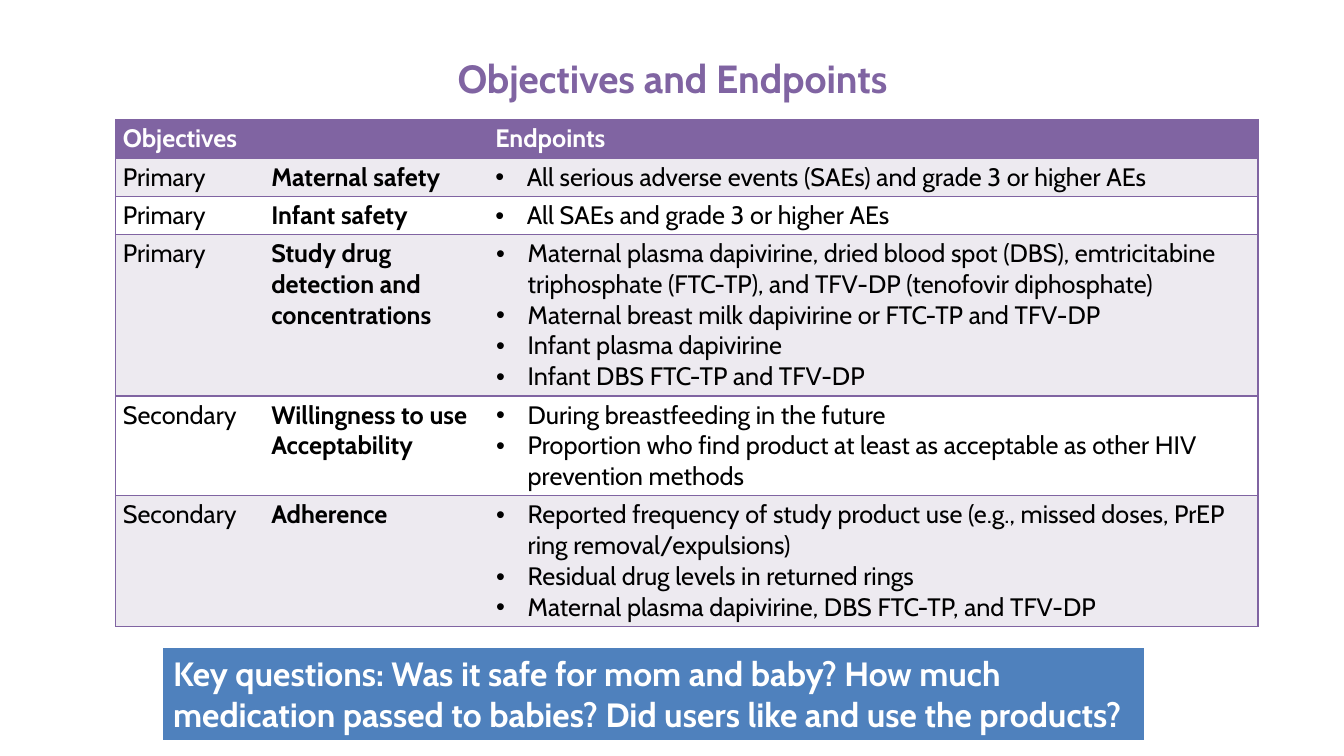
from lxml import etree
from pptx import Presentation
from pptx.dml.color import RGBColor
from pptx.enum.shapes import MSO_SHAPE
from pptx.enum.text import MSO_ANCHOR, PP_ALIGN
from pptx.oxml.ns import qn
from pptx.util import Pt

RECT = MSO_SHAPE.RECTANGLE
TOP = MSO_ANCHOR.TOP
LEFT, MID = PP_ALIGN.LEFT, PP_ALIGN.CENTER
PURPLE, LILAC, WHITE, BLACK, BLUE = "8064A2", "EDEAF0", "FFFFFF", "000000", "4F81BD"


def color(code):
    return RGBColor.from_string(code)


def style(para, size, code, bold):
    para.font.name = "Cabin"
    para.font.size = Pt(size)
    para.font.bold = bold
    para.font.color.rgb = color(code)


deck = Presentation()
deck.slide_width, deck.slide_height = Pt(960), Pt(540)
slide = deck.slides.add_slide(deck.slide_layouts[6])

rows = [
    ("Objectives", [], ["Endpoints"]),
    ("Primary", ["Maternal safety"],
     ["All serious adverse events (SAEs) and grade 3 or higher AEs"]),
    ("Primary", ["Infant safety"], ["All SAEs and grade 3 or higher AEs"]),
    ("Primary", ["Study drug detection and concentrations"],
     ["Maternal plasma dapivirine, dried blood spot (DBS), emtricitabine "
      "triphosphate (FTC-TP), and TFV-DP (tenofovir diphosphate)",
      "Maternal breast milk dapivirine or FTC-TP and TFV-DP",
      "Infant plasma dapivirine",
      "Infant DBS FTC-TP and TFV-DP"]),
    ("Secondary", ["Willingness to use", "Acceptability"],
     ["During breastfeeding in the future",
      "Proportion who find product at least as acceptable as other HIV "
      "prevention methods"]),
    ("Secondary", ["Adherence"],
     ["Reported frequency of study product use (e.g., missed doses, PrEP "
      "ring removal/expulsions)",
      "Residual drug levels in returned rings",
      "Maternal plasma dapivirine, DBS FTC-TP, and TFV-DP"]),
]
widths = [106, 160, 550]
heights = [27.4, 27.4, 27.4, 115.2, 71.2, 93.6]

table = slide.shapes.add_table(
    len(rows), 3, Pt(82.6), Pt(85.4), Pt(sum(widths)), Pt(sum(heights))).table
for col, width in zip(table.columns, widths):
    col.width = Pt(width)
for row, height in zip(table.rows, heights):
    row.height = Pt(height)
table.cell(0, 0).merge(table.cell(0, 1))

for y, (kind, goals, ends) in enumerate(rows):
    for x, lines in enumerate([[kind], goals, ends]):
        cell = table.cell(y, x)
        cell.margin_left = cell.margin_right = Pt(5.2)
        cell.margin_top = cell.margin_bottom = Pt(2.7)
        cell.vertical_anchor = TOP
        edges = {"L": x == 0, "R": x == 2, "T": True, "B": True}
        for side, shown in edges.items():
            line = etree.SubElement(
                cell._tc.get_or_add_tcPr(), qn("a:ln" + side), w=str(Pt(1)))
            if shown:
                fill = etree.SubElement(line, qn("a:solidFill"))
                etree.SubElement(fill, qn("a:srgbClr"), val=PURPLE)
            else:
                etree.SubElement(line, qn("a:noFill"))
        cell.fill.solid()
        cell.fill.fore_color.rgb = color(
            PURPLE if y == 0 else LILAC if y % 2 else WHITE)
        frame = cell.text_frame
        for n, text in enumerate(lines):
            para = frame.add_paragraph() if n else frame.paragraphs[0]
            para.text = text
            if x == 2 and y > 0:
                props = para._p.get_or_add_pPr()
                props.set("marL", str(Pt(22.5 if y < 3 else 23.2)))
                props.set("indent", str(Pt(-22.5)))
                etree.SubElement(props, qn("a:buFont"), typeface="Arial")
                etree.SubElement(props, qn("a:buChar"), char="•")
            style(para, 18, BLACK if y else WHITE, y == 0 or x == 1)

title = slide.shapes.add_textbox(Pt(143.3), Pt(40.3), Pt(674), Pt(44.6))
key = slide.shapes.add_shape(RECT, Pt(116.6), Pt(463), Pt(700.6), Pt(65.5))
key.shadow.inherit = False
key.fill.solid()
key.fill.fore_color.rgb = color(BLUE)
key.line.fill.background()

labels = [
    (title, "Objectives and Endpoints", 28, PURPLE, MID),
    (key, "Key questions: Was it safe for mom and baby? How much medication "
     "passed to babies? Did users like and use the products?", 24, WHITE, LEFT),
]
for box, text, size, code, align in labels:
    frame = box.text_frame
    frame.word_wrap = True
    frame.vertical_anchor = TOP
    para = frame.paragraphs[0]
    para.text = text
    para.alignment = align
    style(para, size, code, True)
title.text_frame.paragraphs[0].line_spacing = Pt(28.5)

deck.save("out.pptx")
